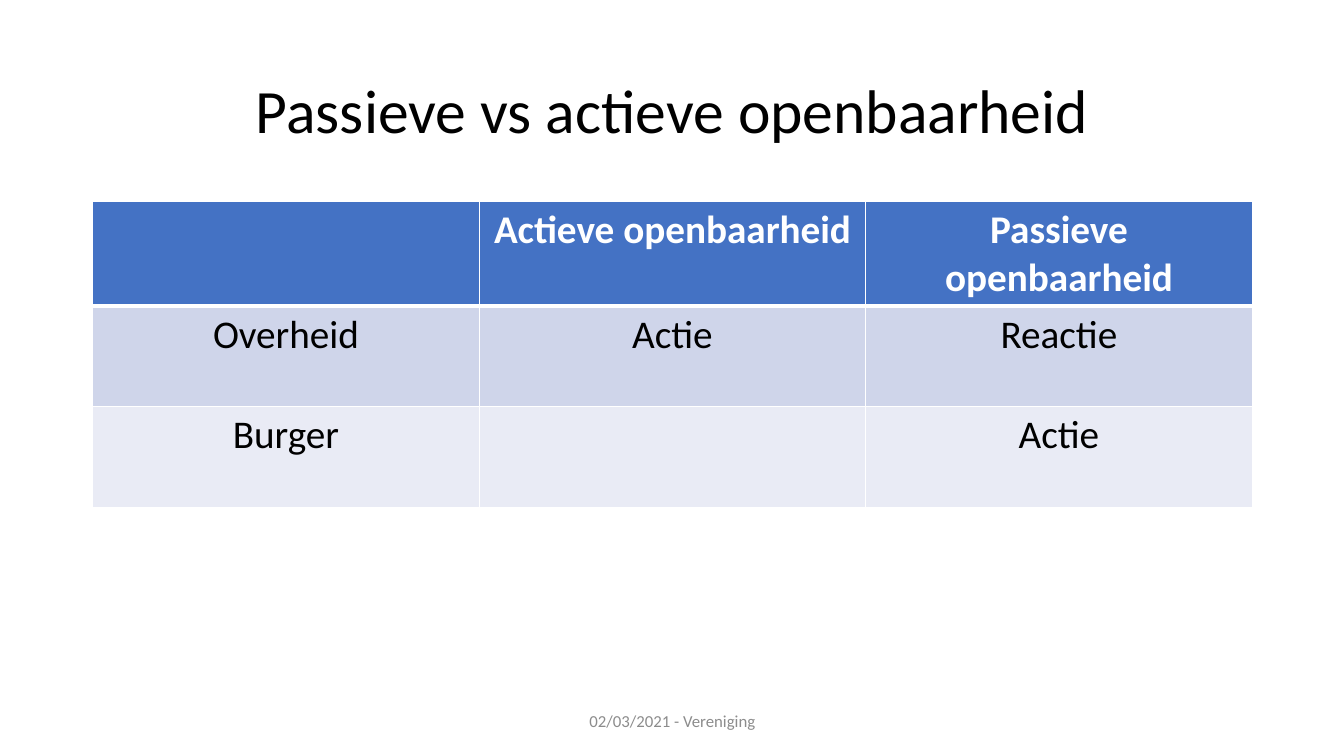
from lxml import etree
from pptx import Presentation
from pptx.dml.color import RGBColor
from pptx.enum import text
from pptx.oxml import ns
from pptx.util import Inches, Pt

WHITE = RGBColor(0xFF, 0xFF, 0xFF)
BLACK = RGBColor(0x00, 0x00, 0x00)
GREY = RGBColor(0x8C, 0x8C, 0x8C)
BLUE = RGBColor(0x44, 0x72, 0xC4)
BAND_DARK = RGBColor(0xCF, 0xD5, 0xEA)
BAND_LIGHT = RGBColor(0xE9, 0xEB, 0xF5)

ROWS = [
    ["", "Actieve openbaarheid", "Passieve openbaarheid"],
    ["Overheid", "Actie", "Reactie"],
    ["Burger", "", "Actie"],
]
ROW_FILLS = [BLUE, BAND_DARK, BAND_LIGHT]


def write(tf, content, size, color, bold=False):
    """Put one centred run of text in a text frame."""
    p = tf.paragraphs[0]
    p.alignment = text.PP_ALIGN.CENTER
    r = p.add_run()
    r.text = content
    for name, value in {"name": "Calibri", "size": Pt(size), "bold": bold}.items():
        setattr(r.font, name, value)
    r.font.color.rgb = color
    return p


def add_label(slide, box, content, size, color):
    """Add a text box, centred both ways in its box."""
    sp = slide.shapes.add_textbox(*map(Inches, box))
    tf = sp.text_frame
    tf.word_wrap = True
    tf.vertical_anchor = text.MSO_ANCHOR.MIDDLE
    return write(tf, content, size, color)


def set_border(cell, side, width):
    tcPr = cell._tc.get_or_add_tcPr()
    ln = etree.SubElement(tcPr, ns.qn(f"a:ln{side}"), w=str(Pt(width)))
    fill = etree.SubElement(ln, ns.qn("a:solidFill"))
    etree.SubElement(fill, ns.qn("a:srgbClr"), val=str(WHITE))


def add_comparison(slide, box):
    """Add the table of who acts under each kind of openness."""
    frame = slide.shapes.add_table(len(ROWS), len(ROWS[0]), *map(Inches, box))
    for i, (labels, fill) in enumerate(zip(ROWS, ROW_FILLS)):
        header = i == 0
        widths = {"L": 1, "R": 1, "T": 3 if i == 1 else 1, "B": 3 if header else 1}
        for j, label in enumerate(labels):
            cell = frame.table.cell(i, j)
            # Borders come before the fill in the cell properties
            for side, width in widths.items():
                set_border(cell, side, width)
            cell.fill.solid()
            cell.fill.fore_color.rgb = fill
            if label:
                write(cell.text_frame, label, 28, WHITE if header else BLACK, header)


def main():
    prs = Presentation()
    prs.slide_width, prs.slide_height = Inches(13.33), Inches(7.5)
    slide = prs.slides.add_slide(prs.slide_layouts[6])

    # Title
    title = add_label(slide, (0.92, 0.4, 11.5, 1.45),
                      "Passieve vs actieve openbaarheid", 44, BLACK)
    title.line_spacing = 0.9

    # Table
    add_comparison(slide, (0.92, 2, 11.5, 3))

    # Footer
    add_label(slide, (4.42, 6.95, 4.5, 0.4), "02/03/2021 - Vereniging", 12, GREY)

    prs.save("out.pptx")


if __name__ == "__main__":
    main()
